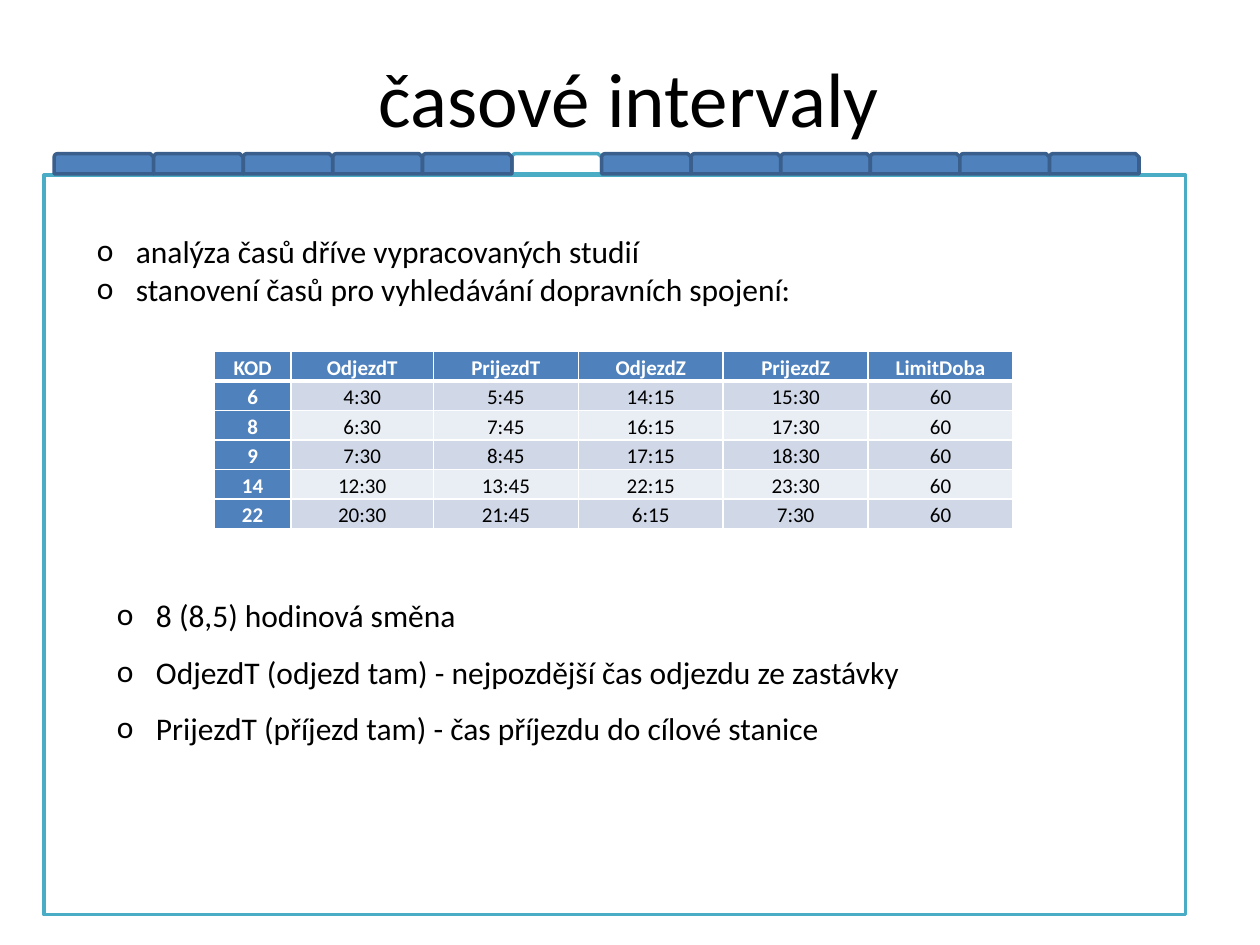
from lxml import etree
from pptx import Presentation
from pptx.dml.color import RGBColor
from pptx.enum.shapes import MSO_SHAPE
from pptx.enum.text import MSO_ANCHOR, PP_ALIGN
from pptx.oxml.ns import qn
from pptx.util import Inches, Pt

RECT = MSO_SHAPE.RECTANGLE
TAB = MSO_SHAPE.SNIP_ROUND_RECTANGLE
CENTER = PP_ALIGN.CENTER
TOP, MIDDLE, BOTTOM = MSO_ANCHOR.TOP, MSO_ANCHOR.MIDDLE, MSO_ANCHOR.BOTTOM

WHITE = RGBColor(0xFF, 0xFF, 0xFF)
BLACK = RGBColor(0, 0, 0)
BLUE = RGBColor(0x4F, 0x81, 0xBD)
NAVY = RGBColor(0x3A, 0x5F, 0x8C)
TEAL = RGBColor(0x4B, 0xAC, 0xC6)
BANDS = (RGBColor(0xE9, 0xED, 0xF4), RGBColor(0xD0, 0xD8, 0xE8))
FONT = "Calibri"

TAB_COUNT = 11
OPEN_TAB = 4
COLS = (0.61, 1.13, 1.15, 1.15, 1.15, 1.15)
TIMES = (
    ("KOD", "OdjezdT", "PrijezdT", "OdjezdZ", "PrijezdZ", "LimitDoba"),
    ("6", "4:30", "5:45", "14:15", "15:30", "60"),
    ("8", "6:30", "7:45", "16:15", "17:30", "60"),
    ("9", "7:30", "8:45", "17:15", "18:30", "60"),
    ("14", "12:30", "13:45", "22:15", "23:30", "60"),
    ("22", "20:30", "21:45", "6:15", "7:30", "60"),
)
STUDIES = (
    ("analýza časů dříve vypracovaných studií", 1.5),
    ("stanovení časů pro vyhledávání dopravních spojení:", 1),
)
SHIFTS = (
    ("8 (8,5) hodinová směna", 1.5),
    ("OdjezdT (odjezd tam) - nejpozdější čas odjezdu ze zastávky", 1.5),
    ("PrijezdT (příjezd tam) - čas příjezdu do cílové stanice", 1.5),
)


def add_run(para, text, size, color=BLACK, bold=False):
    run = para.add_run()
    run.text = text
    run.font.name = FONT
    run.font.size = Pt(size)
    run.font.bold = bold
    run.font.color.rgb = color


def add_box(slide, kind, place, fill, line):
    box = slide.shapes.add_shape(kind, *map(Inches, place))
    box.shadow.inherit = False
    box.fill.solid()
    box.fill.fore_color.rgb = fill
    box.line.color.rgb = line
    box.line.width = Pt(2)


def set_title(slide, text):
    title = slide.shapes.title
    title.left, title.top = Inches(0.49), Inches(0.14)
    title.width, title.height = Inches(9), Inches(1.25)
    title.text_frame.vertical_anchor = MIDDLE
    para = title.text_frame.paragraphs[0]
    para.alignment = CENTER
    add_run(para, text, 44)


def add_tabs(slide):
    """Draw the row of tabs; the open one lies beneath its neighbours."""
    start, last = 1.22, 8.33
    step = (last - start) / (TAB_COUNT - 1)
    add_box(slide, TAB, (0.43, 1.22, 0.79, 0.16), BLUE, NAVY)
    for i in sorted(range(TAB_COUNT), key=lambda i: i != OPEN_TAB):
        fill, line = (WHITE, TEAL) if i == OPEN_TAB else (BLUE, NAVY)
        add_box(slide, TAB, (start + i * step, 1.22, 0.71, 0.16), fill, line)


def add_border(cell, side, width):
    props = cell._tc.get_or_add_tcPr()
    line = etree.SubElement(props, qn("a:ln" + side), w=str(Pt(width)))
    fill = etree.SubElement(line, qn("a:solidFill"))
    etree.SubElement(fill, qn("a:srgbClr"), val=str(WHITE))


def fill_cell(cell, text, row, col):
    head = row == 0 or col == 0
    for side in "LRTB":
        thick = (row, side) in ((0, "B"), (1, "T"))
        add_border(cell, side, 3 if thick else 1)
    cell.fill.solid()
    cell.fill.fore_color.rgb = BLUE if head else BANDS[row % 2]
    cell.margin_left = cell.margin_right = Inches(0.05)
    cell.margin_top = cell.margin_bottom = 0
    cell.vertical_anchor = MIDDLE if row == 0 else TOP if col == 0 else BOTTOM
    para = cell.text_frame.paragraphs[0]
    para.alignment = CENTER
    para.line_spacing = 1.15
    add_run(para, text, 12, WHITE if head else BLACK, head)


def add_times(slide):
    place = map(Inches, (1.7, 2.79, sum(COLS), 1.38))
    table = slide.shapes.add_table(len(TIMES), len(COLS), *place).table
    for col, width in zip(table.columns, COLS):
        col.width = Inches(width)
    for r, row in enumerate(TIMES):
        for c, text in enumerate(row):
            fill_cell(table.cell(r, c), text, r, c)


def add_bullets(slide, place, items):
    frame = slide.shapes.add_textbox(*map(Inches, place)).text_frame
    frame.word_wrap = True
    for i, (text, space) in enumerate(items):
        para = frame.paragraphs[0] if i == 0 else frame.add_paragraph()
        para.line_spacing = space
        props = para._p.get_or_add_pPr()
        props.set("marL", str(Inches(0.31)))
        props.set("indent", str(Inches(-0.31)))
        etree.SubElement(props, qn("a:buFont"), typeface=FONT)
        etree.SubElement(props, qn("a:buChar"), char="o")
        add_run(para, text, 18)


def main():
    deck = Presentation()
    deck.slide_width, deck.slide_height = Inches(10), Inches(7.5)
    slide = deck.slides.add_slide(deck.slide_layouts[5])
    add_box(slide, RECT, (0.35, 1.39, 9.06, 5.87), WHITE, TEAL)
    set_title(slide, "časové intervaly")
    add_tabs(slide)
    add_times(slide)
    add_bullets(slide, (0.67, 1.64, 8.37, 1.16), STUDIES)
    add_bullets(slide, (0.83, 4.53, 7.86, 1.92), SHIFTS)
    deck.save("out.pptx")


if __name__ == "__main__":
    main()
